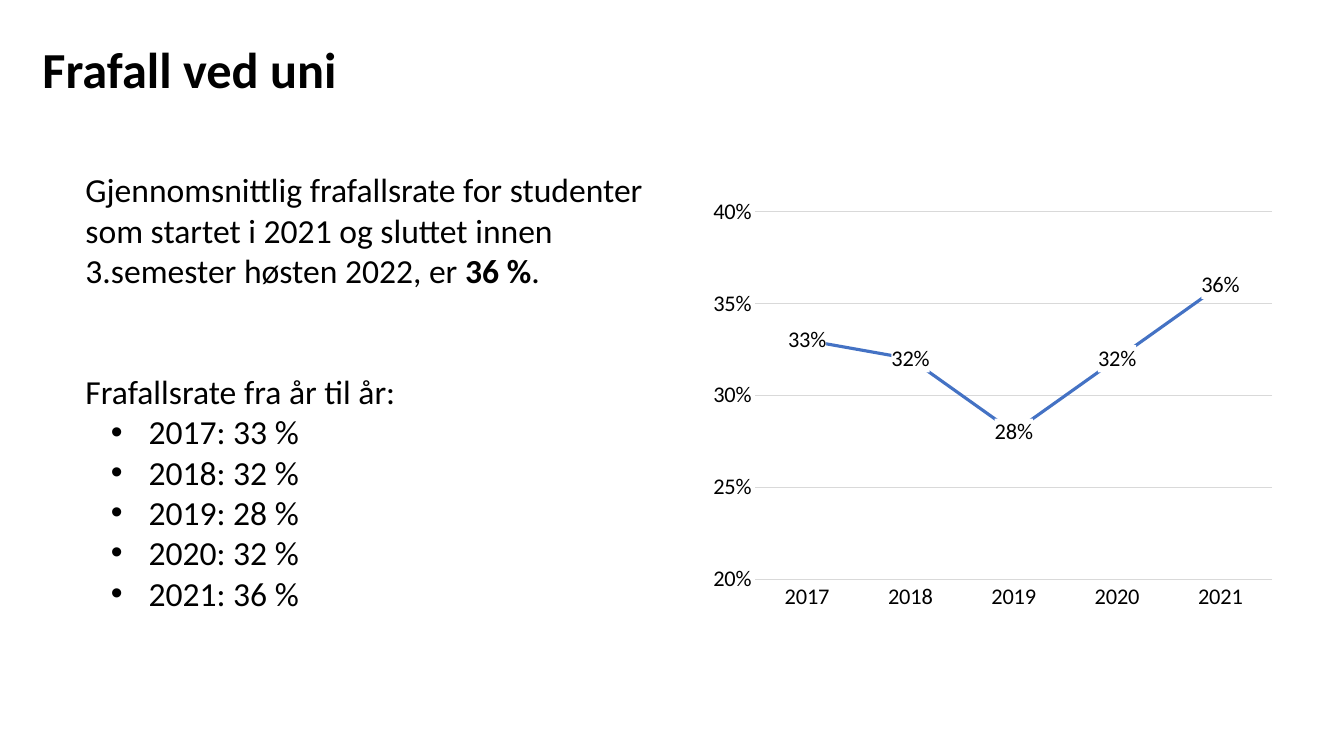
from lxml import etree
from pptx import Presentation
from pptx.chart.data import CategoryChartData
from pptx.dml.color import RGBColor
from pptx.enum.chart import XL_CHART_TYPE, XL_LABEL_POSITION, XL_MARKER_STYLE, XL_TICK_MARK
from pptx.enum.text import MSO_ANCHOR, MSO_AUTO_SIZE, PP_ALIGN
from pptx.oxml import parse_xml
from pptx.oxml.ns import nsdecls, qn
from pptx.util import Cm, Pt

TITLE = "Frafall ved uni"
INTRO = ("Gjennomsnittlig frafallsrate for studenter\n"
         "som startet i 2021 og sluttet innen\n"
         "3.semester høsten 2022, er ")
AVERAGE = "36 %"
LIST_HEADING = "Frafallsrate fra år til år:"
DROPOUT = {"2017": 33, "2018": 32, "2019": 28, "2020": 32, "2021": 36}

FONT = "Calibri"
BLACK = RGBColor(0x00, 0x00, 0x00)
WHITE = RGBColor(0xFF, 0xFF, 0xFF)
BLUE = RGBColor(0x44, 0x72, 0xC4)
GREY = RGBColor(0xD9, 0xD9, 0xD9)
LINE_PITCH = Pt(28.8)
PLOT_AREA = {"x": 0.09, "y": 0.05, "w": 0.89, "h": 0.86}


def place(shape, left, top, width, height):
    shape.left, shape.top = Cm(left), Cm(top)
    shape.width, shape.height = Cm(width), Cm(height)


def set_font(font, size, bold=False):
    font.name, font.size, font.bold = FONT, Pt(size), bold
    font.color.rgb = BLACK


def set_bullet(p, char=None, margin=0, indent=0):
    pPr = p._p.get_or_add_pPr()
    pPr.set("marL", str(Cm(margin)))
    pPr.set("indent", str(Cm(indent)))
    if char:
        etree.SubElement(pPr, qn("a:buFont")).set("typeface", "Arial")
        etree.SubElement(pPr, qn("a:buChar")).set("char", char)
    else:
        etree.SubElement(pPr, qn("a:buNone"))


def add_title(s):
    title = s.shapes.title
    place(title, 1.07, 0.96, 27, 1.3)
    tf = title.text_frame
    tf.text = TITLE
    tf.auto_size = MSO_AUTO_SIZE.NONE
    tf.vertical_anchor = MSO_ANCHOR.TOP
    tf.margin_left = tf.margin_right = tf.margin_top = tf.margin_bottom = 0
    p = tf.paragraphs[0]
    p.alignment = PP_ALIGN.LEFT
    set_font(p.runs[0].font, 36, True)


def add_body(s):
    body = s.placeholders[1]
    place(body, 1.9, 4.14, 29.72, 12.12)
    body.line.color.rgb = WHITE
    body.line.width = Pt(0.75)
    tf = body.text_frame
    tf.auto_size = MSO_AUTO_SIZE.NONE
    tf.vertical_anchor = MSO_ANCHOR.TOP
    years = [f"{year}: {rate} %" for year, rate in DROPOUT.items()]
    for i, text in enumerate([INTRO, LIST_HEADING] + years):
        p = tf.paragraphs[0] if i == 0 else tf.add_paragraph()
        p.text = text
        p.line_spacing = LINE_PITCH
        p.space_before = 2 * LINE_PITCH if text == LIST_HEADING else Pt(0)
        if text in years:
            p.level = 1
            set_bullet(p, "•", 1.59, -0.95)
        else:
            set_bullet(p)
        if text == INTRO:
            for part in (AVERAGE, "."):
                p.add_run().text = part
        for r in p.runs:
            set_font(r.font, 24, r.text == AVERAGE)


def add_dropout_chart(s):
    data = CategoryChartData(number_format="0%")
    data.categories = list(DROPOUT)
    data.add_series("Series 1", [rate / 100 for rate in DROPOUT.values()])
    chart = s.shapes.add_chart(XL_CHART_TYPE.LINE, Cm(17.72), Cm(4.8),
                               Cm(14.63), Cm(10.77), data).chart
    chart.has_legend = chart.has_title = False
    set_font(chart.font, 16)

    for axis in (chart.category_axis, chart.value_axis):
        axis.major_tick_mark = axis.minor_tick_mark = XL_TICK_MARK.NONE
        set_font(axis.tick_labels.font, 16)
    grid = chart.value_axis.major_gridlines
    for line in (chart.category_axis.format.line, grid.format.line):
        line.color.rgb = GREY
        line.width = Pt(0.75)
    values = chart.value_axis
    values.minimum_scale, values.maximum_scale, values.major_unit = 0.2, 0.4, 0.05
    values.format.line.fill.background()
    values.tick_labels.number_format = "0%"
    values.tick_labels.number_format_is_linked = False

    plot = chart.plots[0]
    plot.vary_by_categories = False
    rates = plot.series[0]
    rates.smooth = False
    rates.marker.style = XL_MARKER_STYLE.NONE
    rates.format.line.color.rgb = BLUE
    rates.format.line.width = Pt(2.25)
    labels = rates.data_labels
    labels.show_value = True
    labels.position = XL_LABEL_POSITION.CENTER
    labels.number_format = "0%"
    labels.number_format_is_linked = False
    set_font(labels.font, 16)
    # White label boxes interrupt the line behind the figures
    labels._element.find(qn("c:txPr")).addprevious(parse_xml(
        f'<c:spPr {nsdecls("c", "a")}><a:solidFill><a:srgbClr val="{WHITE}"/>'
        '</a:solidFill></c:spPr>'))

    plot_area = chart._chartSpace.chart.plotArea
    for old in plot_area.findall(qn("c:layout")):
        plot_area.remove(old)
    layout = etree.Element(qn("c:layout"))
    manual = etree.SubElement(layout, qn("c:manualLayout"))
    settings = {"layoutTarget": "inner", "xMode": "edge", "yMode": "edge"} | PLOT_AREA
    for tag, value in settings.items():
        etree.SubElement(manual, qn(f"c:{tag}")).set("val", str(value))
    plot_area.insert(0, layout)


def main():
    prs = Presentation()
    prs.slide_width, prs.slide_height = Cm(33.87), Cm(19.05)
    s = prs.slides.add_slide(prs.slide_layouts[1])
    add_title(s)
    add_body(s)
    add_dropout_chart(s)
    prs.save("out.pptx")


if __name__ == "__main__":
    main()
